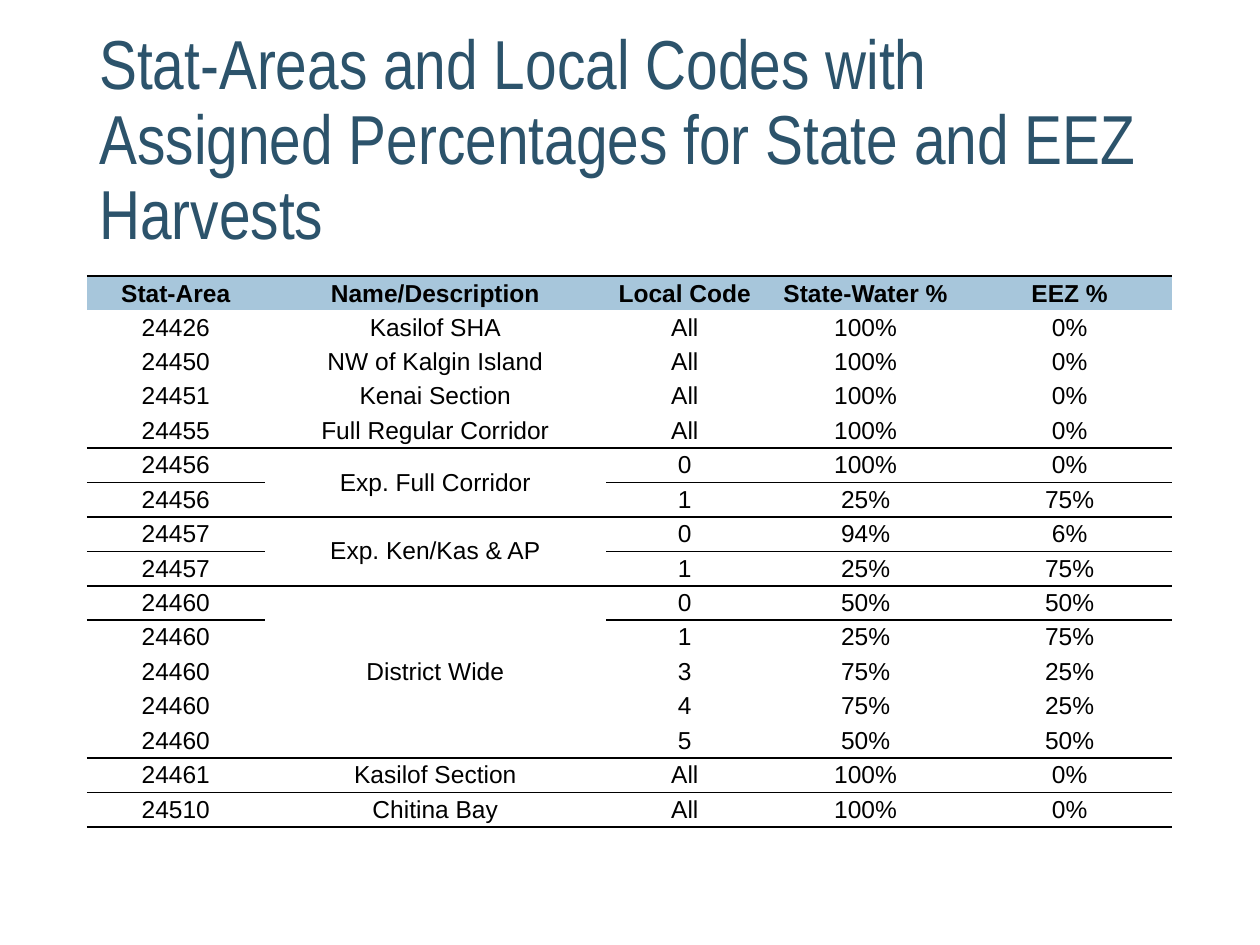
from lxml.etree import SubElement
from pptx import Presentation
from pptx.dml.color import RGBColor
from pptx.enum.text import MSO_ANCHOR, PP_ALIGN
from pptx.oxml.ns import qn
from pptx.util import Inches, Pt

TITLE_BLUE = RGBColor(0x2C, 0x53, 0x6B)
HEADER_BLUE = RGBColor(0xA7, 0xC6, 0xDB)
BLACK = RGBColor(0, 0, 0)
NO_STYLE = "{2D5ABB26-0587-4C30-8999-92F81FD0307C}"

TITLE = "Stat-Areas and Local Codes with Assigned Percentages for State and EEZ Harvests"
HEADER = ("Stat-Area", "Name/Description", "Local Code", "State-Water %", "EEZ %")
COLUMN_WIDTHS = (1.41, 2.71, 1.25, 1.62, 1.62)
NAME_COLUMN = 1
# Rules separate the groups; an empty name continues the one above.
GROUPS = (
    (
        ("24426", "Kasilof SHA", "All", "100%", "0%"),
        ("24450", "NW of Kalgin Island", "All", "100%", "0%"),
        ("24451", "Kenai Section", "All", "100%", "0%"),
        ("24455", "Full Regular Corridor", "All", "100%", "0%"),
    ),
    (
        ("24456", "Exp. Full Corridor", "0", "100%", "0%"),
        ("24456", "", "1", "25%", "75%"),
    ),
    (
        ("24457", "Exp. Ken/Kas & AP", "0", "94%", "6%"),
        ("24457", "", "1", "25%", "75%"),
    ),
    (
        ("24460", "District Wide", "0", "50%", "50%"),
        ("24460", "", "1", "25%", "75%"),
        ("24460", "", "3", "75%", "25%"),
        ("24460", "", "4", "75%", "25%"),
        ("24460", "", "5", "50%", "50%"),
    ),
    (
        ("24461", "Kasilof Section", "All", "100%", "0%"),
        ("24510", "Chitina Bay", "All", "100%", "0%"),
    ),
)


def set_format(target, values):
    for name, value in values.items():
        setattr(target, name, value)


def set_font(paragraph, color, **values):
    set_format(paragraph.font, values)
    paragraph.font.color.rgb = color


def add_title(slide, left, top, width, height):
    frame = slide.shapes.add_textbox(left, top, width, height).text_frame
    set_format(frame, {"word_wrap": True, "vertical_anchor": MSO_ANCHOR.MIDDLE})
    paragraph = frame.paragraphs[0]
    paragraph.text = TITLE
    paragraph.line_spacing = 0.9
    set_font(paragraph, TITLE_BLUE, name="Arial Narrow", size=Pt(39.6))


def add_border(cell, side, points):
    """Draw a black rule on the side of the cell named by its tag, lnT or lnB."""
    line = SubElement(cell._tc.get_or_add_tcPr(), qn(f"a:{side}"), w=str(Pt(points)))
    fill = SubElement(line, qn("a:solidFill"))
    SubElement(fill, qn("a:srgbClr"), val=str(BLACK))


def fill_cell(cell, text, is_header):
    set_format(cell, {
        "margin_left": Inches(0.08),
        "margin_right": Inches(0.08),
        "margin_top": Inches(0.02),
        "margin_bottom": Inches(0.02),
        "vertical_anchor": MSO_ANCHOR.BOTTOM if is_header else MSO_ANCHOR.MIDDLE,
    })
    if is_header:
        cell.fill.solid()
        cell.fill.fore_color.rgb = HEADER_BLUE
    else:
        cell.fill.background()
    paragraph = cell.text_frame.paragraphs[0]
    paragraph.text = text
    paragraph.alignment = PP_ALIGN.CENTER
    set_font(paragraph, BLACK, name="Arial", size=Pt(14), bold=is_header)


def add_group_borders(table, first, last):
    """Rule off the rows from first to last; the table's outer rules are heavier."""
    final = len(table.rows) - 1
    for column in range(len(HEADER)):
        if first > 1:
            add_border(table.cell(first, column), "lnT", 1)
        add_border(table.cell(last, column), "lnB", 1.5 if last == final else 1)


def merge_names(table, group, first):
    named = [index for index, row in enumerate(group) if row[NAME_COLUMN]]
    for start, end in zip(named, named[1:] + [len(group)]):
        if end - start > 1:
            origin = table.cell(first + start, NAME_COLUMN)
            origin.merge(table.cell(first + end - 1, NAME_COLUMN))
            add_border(origin, "lnB", 1)


def add_harvest_table(slide, left, top, width, height):
    rows = [HEADER] + [row for group in GROUPS for row in group]
    frame = slide.shapes.add_table(len(rows), len(HEADER), left, top, width, height)
    table = frame.table
    set_format(table, {"first_row": True, "horz_banding": False})
    table._tbl.tblPr.find(qn("a:tableStyleId")).text = NO_STYLE
    for column, column_width in zip(table.columns, COLUMN_WIDTHS):
        column.width = Inches(column_width)

    for column in range(len(HEADER)):
        add_border(table.cell(0, column), "lnT", 1.5)
    first = 1
    for group in GROUPS:
        add_group_borders(table, first, first + len(group) - 1)
        merge_names(table, group, first)
        first += len(group)

    for row_index, row in enumerate(rows):
        for column, text in enumerate(row):
            fill_cell(table.cell(row_index, column), text, row_index == 0)


def main():
    presentation = Presentation()
    presentation.slide_width = Inches(10)
    presentation.slide_height = Inches(7.5)
    slide = presentation.slides.add_slide(presentation.slide_layouts[6])
    add_title(slide, Inches(0.69), Inches(0.4), Inches(8.49), Inches(1.45))
    add_harvest_table(slide, Inches(0.69), Inches(2.19), Inches(8.62), Inches(4.06))
    presentation.save("out.pptx")


if __name__ == "__main__":
    main()
